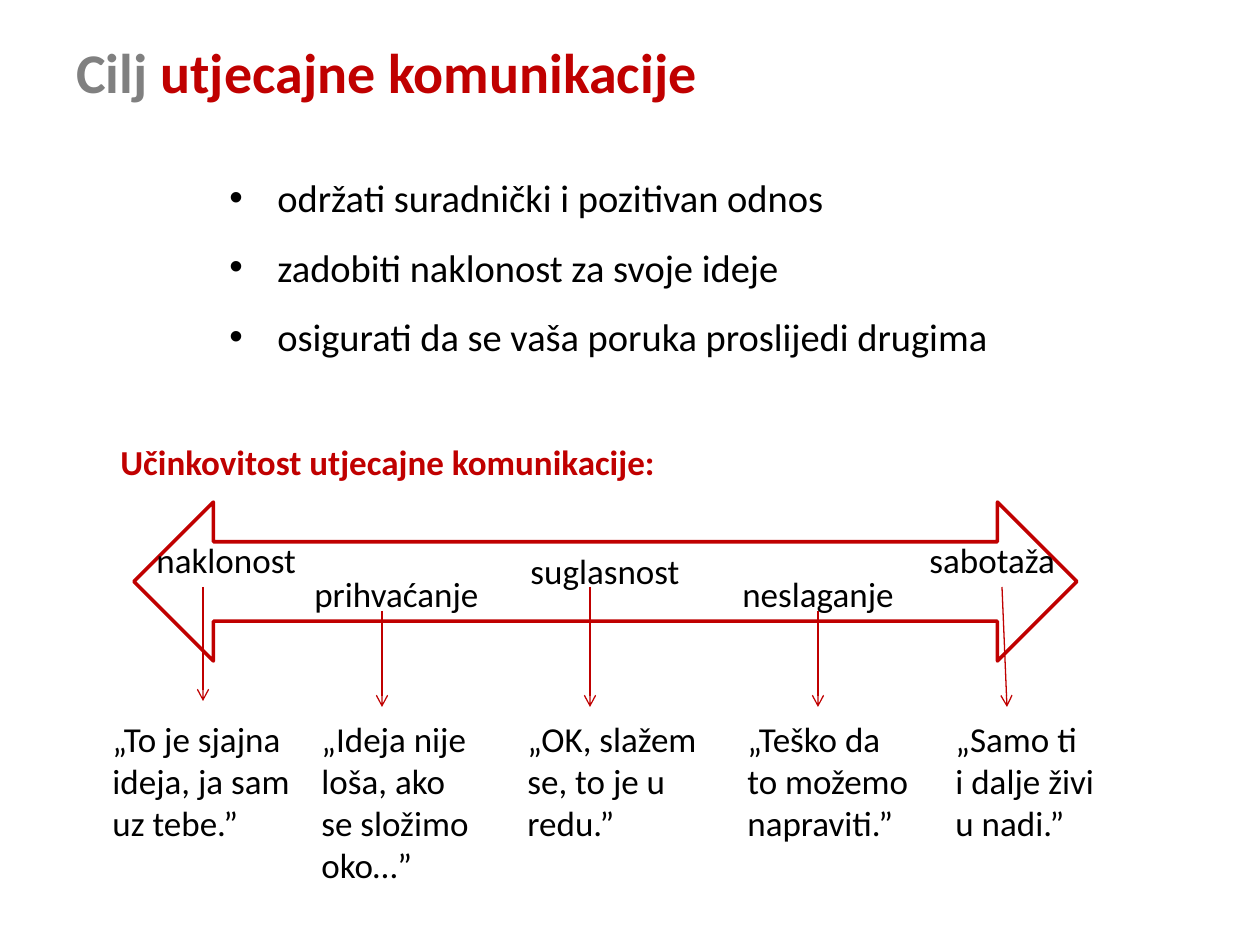
from lxml.etree import SubElement
from pptx import Presentation
from pptx.dml.color import RGBColor
from pptx.enum.shapes import MSO_CONNECTOR as Connector, MSO_SHAPE as Shape
from pptx.enum.text import MSO_ANCHOR as Anchor, PP_ALIGN as Align
from pptx.oxml.ns import qn
from pptx.util import Pt

COLORS = {"red": "C00000", "gray": "808080", "black": "000000"}
FONT = "Calibri"
SCALE = 914400 / 126
HANGING = (48, -48)
QUOTE_INDENT = (36, 0)

TITLE = [("Cilj ", "gray"), ("utjecajne komunikacije", "red")]
GOALS = [
    "održati suradnički i pozitivan odnos",
    "zadobiti naklonost za svoje ideje",
    "osigurati da se vaša poruka proslijedi drugima",
]
SUBTITLE = "Učinkovitost utjecajne komunikacije:"
CONSENT = "suglasnost"
LABELS = [
    ("naklonost", 144, 532, 169),
    ("prihvaćanje", 302, 566, 199),
    ("neslaganje", 730, 566, 189),
    ("sabotaža", 917, 532, 169),
]
ARROWS = [
    (203, 587, 203, 701),
    (382, 611, 382, 707),
    (590, 587, 590, 707),
    (818, 611, 818, 707),
    (1002, 587, 1007, 707),
]
QUOTES = [
    (["„To je sjajna ideja, ja sam uz tebe.”"], 64, 261, 140),
    (["„Ideja nije loša, ako", "se složimo oko…”"], 273, 261, 183),
    (["„OK, slažem se, to je u redu.”"], 479, 261, 140),
    (["„Teško da", "to možemo napraviti.”"], 699, 228, 140),
    (["„Samo ti", "i dalje živi", "u nadi.”"], 907, 218, 140),
]


def px(value):
    return round(value * SCALE)


def color(name):
    return RGBColor.from_string(COLORS[name])


def style(font, size, name, bold=False):
    font.name, font.size, font.bold = FONT, Pt(size), bold
    font.color.rgb = color(name)


def add_box(page, left, top, width, height):
    box = page.shapes.add_textbox(px(left), px(top), px(width), px(height))
    box.text_frame.word_wrap = True
    return box.text_frame


def add_text(page, lines, area, size=20, name="black", bold=False,
             indent=HANGING, spacing=1.0, align=Align.LEFT, bullet=None):
    frame = add_box(page, *area)
    for index, line in enumerate(lines):
        para = frame.paragraphs[0] if index == 0 else frame.add_paragraph()
        para.text = line
        para.alignment, para.line_spacing = align, spacing
        style(para.font, size, name, bold)
        props = para._p.get_or_add_pPr()
        props.set("marL", str(px(indent[0])))
        props.set("indent", str(px(indent[1])))
        if bullet:
            face = props.makeelement(qn("a:buFont"), {"typeface": "Arial"})
            mark = props.makeelement(qn("a:buChar"), {"char": bullet})
            props.find(qn("a:defRPr")).addprevious(face)
            face.addnext(mark)


def add_arrow(page, start_x, start_y, end_x, end_y):
    arrow = page.shapes.add_connector(
        Connector.STRAIGHT, px(start_x), px(start_y), px(end_x), px(end_y))
    arrow.line.color.rgb = color("red")
    arrow.line.width = Pt(0.75)
    SubElement(arrow.line._get_or_add_ln(), qn("a:tailEnd"), type="arrow")
    SubElement(arrow._element.spPr, qn("a:effectLst"))


def main():
    deck = Presentation()
    deck.slide_width, deck.slide_height = px(1260), px(945)
    page = deck.slides.add_slide(deck.slide_layouts[6])

    title = add_box(page, 64, 26, 893, 91)
    title.vertical_anchor = Anchor.MIDDLE
    for text, name in TITLE:
        span = title.paragraphs[0].add_run()
        span.text = text
        style(span.font, 32, name, True)

    add_text(page, GOALS, (217, 145, 844, 223), size=22, spacing=1.5, bullet="•")
    add_text(page, [SUBTITLE], (108, 413, 650, 77), name="red", bold=True, spacing=1.5)

    scale_arrow = page.shapes.add_shape(
        Shape.LEFT_RIGHT_ARROW, px(134), px(502), px(943), px(159))
    scale_arrow.shadow.inherit = False
    scale_arrow.fill.background()
    scale_arrow.line.color.rgb = color("red")
    scale_arrow.line.width = Pt(2)

    add_text(page, [CONSENT], (501, 522, 208, 77), spacing=1.5, align=Align.CENTER)
    for text, left, top, width in LABELS:
        add_text(page, [text], (left, top, width, 55))
    for ends in ARROWS:
        add_arrow(page, *ends)
    for lines, left, width, height in QUOTES:
        add_text(page, lines, (left, 711, width, height), indent=QUOTE_INDENT)

    deck.save("out.pptx")


if __name__ == "__main__":
    main()
